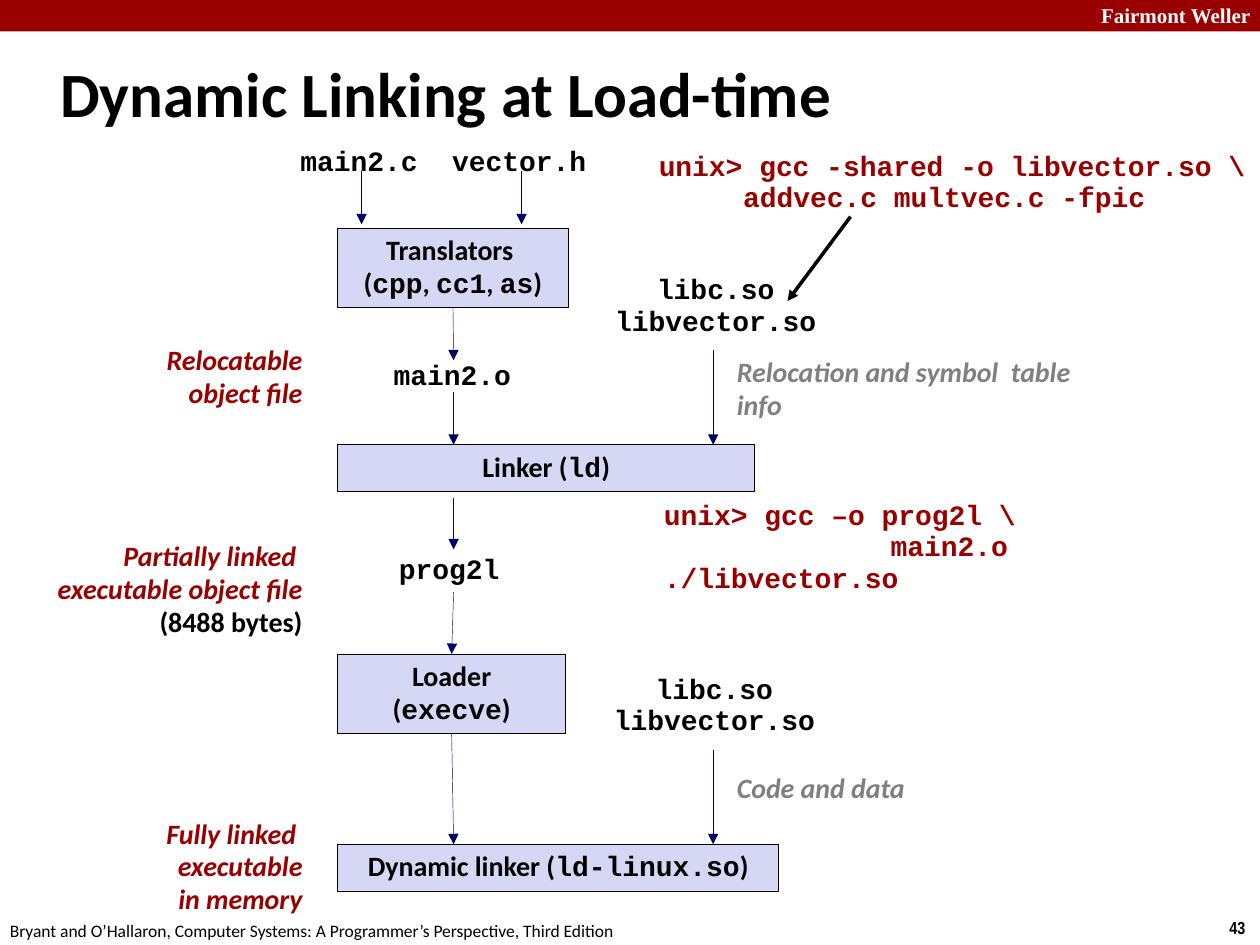
import pptx
import pptx.util
import pptx.dml.color
import pptx.enum.shapes
import pptx.enum.text
import pptx.oxml.ns
from lxml import etree

Inches = pptx.util.Inches
Pt = pptx.util.Pt
RGB = pptx.dml.color.RGBColor
RED = RGB(0x99, 0x00, 0x00)
NAVY = RGB(0x00, 0x00, 0x66)
LILAC = RGB(0xD6, 0xD6, 0xF5)
GRAY = RGB(0x80, 0x80, 0x80)
BLACK = RGB(0x00, 0x00, 0x00)
WHITE = RGB(0xFF, 0xFF, 0xFF)
ALIGN = pptx.enum.text.PP_ALIGN
ANCHOR = pptx.enum.text.MSO_ANCHOR
RECT = pptx.enum.shapes.MSO_SHAPE.RECTANGLE
MONO = "Courier New"

deck = pptx.Presentation()
deck.slide_width = Inches(10)
deck.slide_height = Inches(7.5)
slide = deck.slides.add_slide(deck.slide_layouts[6])
shapes = slide.shapes


def write(text, at, fill=None, edge=None, font="Calibri", size=16, color=BLACK,
          bold=True, slant=False, align=ALIGN.LEFT, space=None, wrap=False,
          anchor=ANCHOR.TOP, dents=()):
    """Put text in a box; parts between backticks are set in MONO."""
    place = [Inches(v) for v in at]
    if fill is None:
        box = shapes.add_textbox(*place)
    else:
        box = shapes.add_shape(RECT, *place)
        box.shadow.inherit = False
        box.fill.solid()
        box.fill.fore_color.rgb = fill
        if edge is None:
            box.line.fill.background()
        else:
            box.line.color.rgb = edge
            box.line.width = Pt(0.25)
    frame = box.text_frame
    frame.word_wrap = wrap
    frame.vertical_anchor = anchor
    for i, line in enumerate(text.split("\n")):
        para = frame.paragraphs[0] if i == 0 else frame.add_paragraph()
        para.alignment = align
        para.line_spacing = space
        if i < len(dents):
            para._p.get_or_add_pPr().set("marL", str(Inches(dents[i])))
        for j, part in enumerate(line.split("`")):
            if part:
                run = para.add_run()
                run.text = part
                run.font.name = MONO if j % 2 else font
                run.font.size = Pt(size)
                run.font.bold = bold
                run.font.italic = slant
                run.font.color.rgb = color
    return box


def arrow(x1, y1, x2, y2, color=NAVY, width=0.25, start=None, end=None):
    """Draw an arrow, joined to the bottom of start and the top of end."""
    line = shapes.add_connector(pptx.enum.shapes.MSO_CONNECTOR.STRAIGHT,
                                Inches(x1), Inches(y1), Inches(x2), Inches(y2))
    line.line.color.rgb = color
    line.line.width = Pt(width)
    mark = pptx.oxml.ns.qn
    head = etree.SubElement(line.line._get_or_add_ln(), mark("a:tailEnd"))
    head.set("type", "triangle")
    etree.SubElement(line._element.spPr, mark("a:effectLst"))
    if start is not None:
        line.begin_connect(start, 2)
    if end is not None:
        line.end_connect(end, 0)


# Banner, footer and title
write("", (0, 0, 10, 0.25), fill=RED)
write("Fairmont Weller", (8.64, -0.03, 1.43, 0.3), font="Times New Roman",
      size=12, color=WHITE)
write("43", (9.66, 7.23, 0.34, 0.27), font="Arial Narrow", size=10)
write("Bryant and O’Hallaron, Computer Systems: A Programmer’s Perspective, "
      "Third Edition", (-0.02, 7.25, 5.08, 0.27), size=10, bold=False)
write("Dynamic Linking at Load-time", (0.38, 0.31, 9.53, 0.85), size=36,
      wrap=True, anchor=ANCHOR.MIDDLE)

# Tool boxes
tools = [
    write(text, (2.68, top, wide, high), fill=LILAC, edge=BLACK,
          align=ALIGN.CENTER, space=0.98, wrap=True)
    for text, top, wide, high in [
        ("Translators \n(`cpp`, `cc1`, `as`)", 1.81, 1.83, 0.63),
        ("Linker (`ld`)", 3.53, 3.31, 0.37),
        ("Loader (`execve`)", 5.19, 1.81, 0.63),
        ("Dynamic linker (`ld-linux.so`)", 6.7, 3.5, 0.37),
    ]
]
trans, link, load, dyn = tools

# File names
for text, *at in [
    ("main2.c", 2.28, 1.11, 1.14, 0.36),
    ("vector.h", 3.48, 1.11, 1.28, 0.36),
    ("main2.o", 3.02, 2.81, 1.14, 0.36),
    ("prog2l", 3.06, 4.35, 1.01, 0.36),
    ("libc.so\nlibvector.so", 4.77, 2.13, 1.82, 0.61),
    ("libc.so\nlibvector.so", 4.76, 5.3, 1.82, 0.61),
]:
    write(text, at, font=MONO, align=ALIGN.CENTER, space=0.94)

# Red labels on the left, all ending at the same edge
for text, top, wide, high in [
    ("Relocatable\nobject file", 2.68, 1.5, 0.63),
    ("Partially linked \nexecutable object file", 4.24, 2.75, 0.63),
    ("Fully linked \nexecutable\nin memory", 6.44, 1.92, 0.89),
]:
    write(text, (2.5 - wide, top, wide, high), color=RED, slant=True,
          align=ALIGN.RIGHT, space=0.98, wrap=True)
write("(8488 bytes)", (0.5, 4.76, 2, 0.37), align=ALIGN.RIGHT, space=0.98,
      wrap=True)

# Gray notes on the right
for text, top, wide, high in [
    ("Relocation and symbol  table info", 2.78, 2.85, 0.63),
    ("Code and data", 6.08, 1.94, 0.37),
]:
    write(text, (5.75, top, wide, high), color=GRAY, slant=True, space=0.98,
          wrap=True)

# Shell commands
write("unix> gcc -shared -o libvector.so \\\naddvec.c multvec.c -fpic",
      (5.13, 1.15, 4.92, 0.61), font=MONO, color=RED, space=0.94,
      dents=(0, 0.67))
write("unix> gcc –o prog2l \\\nmain2.o\n./libvector.so",
      (5.17, 3.92, 3.98, 0.85), font=MONO, color=RED, space=0.94, wrap=True,
      dents=(0, 1.8))

# Flow arrows
for x in (2.87, 4.14):
    arrow(x, 1.36, x, 1.78)
for top, low, start, end in [
    (2.44, 2.86, trans, None),
    (3.11, 3.53, None, None),
    (3.95, 4.36, None, None),
    (4.7, 5.19, None, load),
    (5.82, 6.7, load, None),
]:
    arrow(3.6, top, 3.6, low, start=start, end=end)
for top, low in [(2.78, 3.53), (5.95, 6.7)]:
    arrow(5.66, top, 5.66, low)
arrow(6.75, 1.72, 6.25, 2.39, color=BLACK, width=2)

deck.save("out.pptx")
